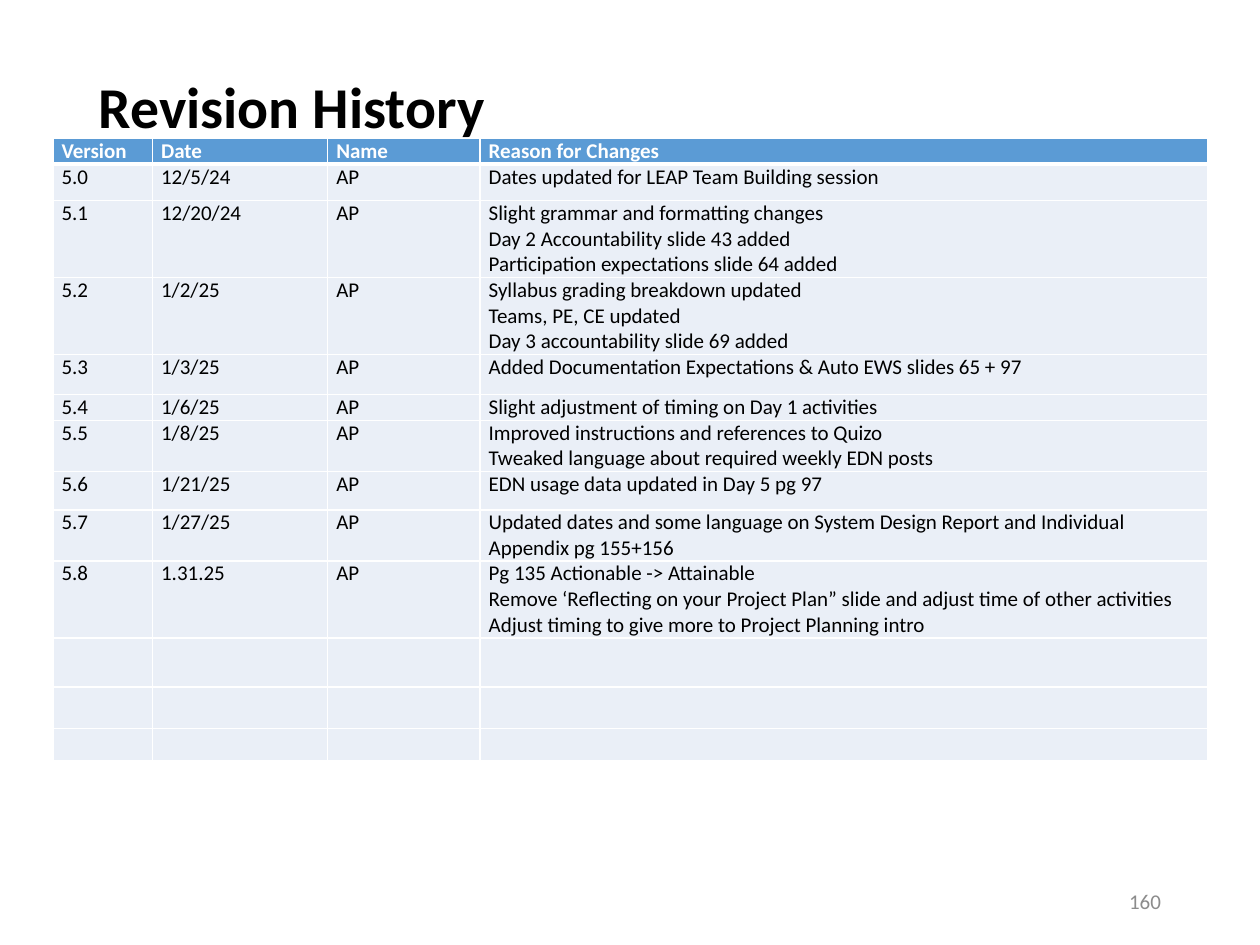
from lxml import etree
from pptx import Presentation
from pptx.dml.color import RGBColor
from pptx.enum.text import MSO_ANCHOR, PP_ALIGN
from pptx.oxml.ns import qn
from pptx.util import Pt

MIDDLE = MSO_ANCHOR.MIDDLE
LEFT, RIGHT = PP_ALIGN.LEFT, PP_ALIGN.RIGHT

FONT = "Calibri"
COLORS = {"text": "000000", "header": "5B9BD5", "row": "EAEFF7",
          "white": "FFFFFF", "page": "8C8C8C"}
BODY_SIZE = 12

COLUMN_WIDTHS = [56.9, 100.1, 87.1, 416.1]
HEADINGS = ["Version", "Date", "Name", "Reason for Changes"]
AUTHOR = "AP"
# Version, date, reasons, row height
REVISIONS = [
    ("5.0", "12/5/24", "Dates updated for LEAP Team Building session", 20.9),
    ("5.1", "12/20/24", "Slight grammar and formatting changes\n"
     "Day 2 Accountability slide 43 added\n"
     "Participation expectations slide 64 added", 44),
    ("5.2", "1/2/25", "Syllabus grading breakdown updated\n"
     "Teams, PE, CE updated\n"
     "Day 3 accountability slide 69 added", 44),
    ("5.3", "1/3/25", "Added Documentation Expectations & Auto EWS slides 65 + 97", 22.9),
    ("5.4", "1/6/25", "Slight adjustment of timing on Day 1 activities", 14.6),
    ("5.5", "1/8/25", "Improved instructions and references to Quizo\n"
     "Tweaked language about required weekly EDN posts", 29.3),
    ("5.6", "1/21/25", "EDN usage data updated in Day 5 pg 97", 21.9),
    ("5.7", "1/27/25", "Updated dates and some language on System Design Report "
     "and Individual Appendix pg 155+156", 29.3),
    ("5.8", "1.31.25", "Pg 135 Actionable -> Attainable\n"
     "Remove ‘Reflecting on your Project Plan” slide and adjust time of other activities\n"
     "Adjust timing to give more to Project Planning intro", 43.9),
]
HEADER_HEIGHT = 14.6
SPARE_HEIGHTS = [28, 23.8, 18.5]


def rgb(name):
    return RGBColor.from_string(COLORS[name])


def format_runs(paragraph, size, color, bold=False):
    for run in paragraph.runs:
        run.font.name = FONT
        run.font.size = Pt(size)
        run.font.bold = bold
        run.font.color.rgb = rgb(color)


def add_line(slide, box, text, size, color, bold=False, align=LEFT):
    """Add a one-line text box, centred vertically, and return its frame."""
    frame = slide.shapes.add_textbox(*map(Pt, box)).text_frame
    frame.word_wrap = True
    frame.vertical_anchor = MIDDLE
    line = frame.paragraphs[0]
    line.text = text
    line.alignment = align
    format_runs(line, size, color, bold)
    return frame


def add_title(slide, box):
    frame = add_line(slide, box, "Revision History", 33, "text", bold=True)
    frame.paragraphs[0].line_spacing = 0.9
    frame.margin_bottom = Pt(39.6)


def set_borders(cell, bottom):
    properties = cell._tc.get_or_add_tcPr()
    for side, width in (("L", 1), ("R", 1), ("T", 1), ("B", bottom)):
        border = etree.SubElement(properties, qn(f"a:ln{side}"), w=str(Pt(width)))
        fill = etree.SubElement(border, qn("a:solidFill"))
        etree.SubElement(fill, qn("a:srgbClr"), val=COLORS["white"])


def fill_cell(cell, text, is_header):
    cell.margin_left = cell.margin_right = Pt(5)
    cell.margin_top = cell.margin_bottom = 0
    set_borders(cell, 3 if is_header else 1)
    cell.fill.solid()
    cell.fill.fore_color.rgb = rgb("header" if is_header else "row")
    cell.text_frame.text = text
    for paragraph in cell.text_frame.paragraphs:
        format_runs(paragraph, BODY_SIZE, "white" if is_header else "text", is_header)
        if not text:
            # Keeps an empty row from growing to the default text size
            etree.SubElement(paragraph._p, qn("a:endParaRPr"), sz=str(BODY_SIZE * 100))


def add_revision_table(slide, left, top):
    rows = [(HEADINGS, HEADER_HEIGHT)]
    rows += [((version, date, AUTHOR, reasons), height)
             for version, date, reasons, height in REVISIONS]
    rows += [([""] * len(HEADINGS), height) for height in SPARE_HEIGHTS]
    width = sum(COLUMN_WIDTHS)
    total_height = sum(height for _, height in rows)
    table = slide.shapes.add_table(len(rows), len(HEADINGS), Pt(left), Pt(top),
                                   Pt(width), Pt(total_height)).table
    table.horz_banding = False
    for column, column_width in zip(table.columns, COLUMN_WIDTHS):
        column.width = Pt(column_width)
    for index, (texts, height) in enumerate(rows):
        table.rows[index].height = Pt(height)
        for cell, text in zip(table.rows[index].cells, texts):
            fill_cell(cell, text, is_header=index == 0)


def main():
    deck = Presentation()
    deck.slide_width, deck.slide_height = Pt(720), Pt(540)
    slide = deck.slides.add_slide(deck.slide_layouts[6])
    add_title(slide, (49.5, 28.8, 621, 104.4))
    add_revision_table(slide, 30.2, 79.2)
    add_line(slide, (508.5, 500.5, 162, 28.8), "160", BODY_SIZE, "page", align=RIGHT)
    deck.save("out.pptx")


if __name__ == "__main__":
    main()
